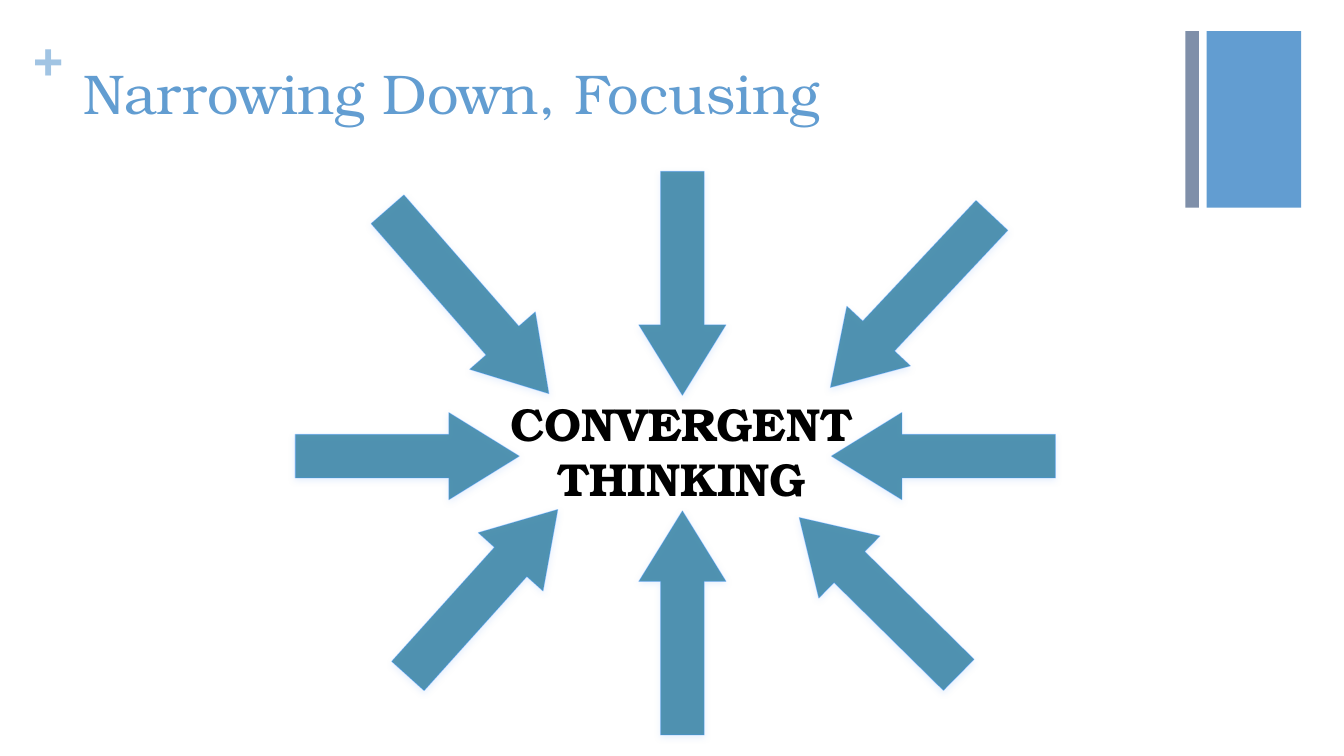
from lxml import etree
from pptx import Presentation
from pptx.dml.color import RGBColor
from pptx.enum.shapes import MSO_SHAPE
from pptx.enum.text import MSO_ANCHOR, MSO_AUTO_SIZE, PP_ALIGN
from pptx.oxml.ns import qn
from pptx.util import Pt

RECTANGLE, LEFT_ARROW = MSO_SHAPE.RECTANGLE, MSO_SHAPE.LEFT_ARROW
TOP, BOTTOM = MSO_ANCHOR.TOP, MSO_ANCHOR.BOTTOM
LEFT, CENTER = PP_ALIGN.LEFT, PP_ALIGN.CENTER
FONT = "TeX Gyre Bonum"
COLORS = {
    "blue": "629DD1", "pale": "A1C4E3", "slate": "7F8FA9", "black": "000000",
    "arrow": "2C7C9F", "outline": "3A93FF", "shadow": "ACCBF9",
}
ARROW_HEIGHT = 62.2
# Centre x, centre y, length, rotation
ARROWS = [
    (334.44, 215.28, 174.96, 228.8),
    (290.88, 325.8, 160, 180),
    (673.92, 325.8, 160, 0),
    (487.44, 202.32, 160, 270),
    (650.88, 215.28, 168.48, 313.2),
    (344.88, 423.36, 160, 132),
    (487.44, 444.96, 160, 90),
    (627.84, 425.88, 160, 44.6),
]


def color(name):
    return RGBColor.from_string(COLORS[name])


def points(*lengths):
    return [Pt(length) for length in lengths]


def write_text(shape, lines, size, color_name, bold=False, align=LEFT,
               anchor=TOP, margins=(7.2, 3.6, 7.2, 3.6)):
    frame = shape.text_frame
    left, top, right, bottom = points(*margins)
    settings = {
        "word_wrap": True, "auto_size": MSO_AUTO_SIZE.NONE,
        "vertical_anchor": anchor, "margin_left": left, "margin_top": top,
        "margin_right": right, "margin_bottom": bottom,
    }
    for name, value in settings.items():
        setattr(frame, name, value)
    frame.text = "\n".join(lines)
    for paragraph in frame.paragraphs:
        paragraph.alignment = align
        paragraph.space_before = Pt(0)
        for name, value in {"name": FONT, "size": Pt(size), "bold": bold}.items():
            setattr(paragraph.font, name, value)
        paragraph.font.color.rgb = color(color_name)


def set_opacity(fill_parent, percent):
    """Add an alpha value to the solid colour directly below the element."""
    color_element = fill_parent.find(qn("a:solidFill"))[0]
    etree.SubElement(color_element, qn("a:alpha"), val=str(percent * 1000))


def add_soft_shadow(shape):
    shape.shadow.inherit = False
    effects = shape._element.spPr.find(qn("a:effectLst"))
    shadow = etree.SubElement(
        effects, qn("a:outerShdw"), blurRad=str(Pt(5)), dist=str(Pt(1.8)),
        dir=str(90 * 60000), rotWithShape="0")
    shade = etree.SubElement(shadow, qn("a:srgbClr"), val=COLORS["shadow"])
    etree.SubElement(shade, qn("a:alpha"), val="35000")


def add_corner_bars(slide, left, top, width, height):
    slate_width = 9.6
    blue_left = 15.2
    bars = [("blue", left + blue_left, width - blue_left),
            ("slate", left, slate_width)]
    for color_name, bar_left, bar_width in bars:
        bar = slide.shapes.add_shape(
            RECTANGLE, *points(bar_left, top, bar_width, height))
        bar.shadow.inherit = False
        bar.fill.solid()
        bar.fill.fore_color.rgb = color(color_name)
        bar.line.fill.background()


def add_heading(slide, left, top, width, height):
    plus = slide.shapes.add_textbox(*points(left, top, 27.4, 44))
    write_text(plus, ["+"], 36, "pale", bold=True, margins=(0, 0, 0, 0))
    title = slide.shapes.title
    indent, drop = 28.8, 20.2
    title.left, title.top, title.width, title.height = points(
        left + indent, top + drop, width - indent, height - drop)
    write_text(title, ["Narrowing Down, Focusing"], 40, "blue")


def add_arrow(group, center_x, center_y, length, rotation):
    arrow = group.shapes.add_shape(LEFT_ARROW, *points(
        center_x - length / 2, center_y - ARROW_HEIGHT / 2, length, ARROW_HEIGHT))
    arrow.rotation = rotation
    arrow.adjustments[0] = 0.5
    arrow.adjustments[1] = 0.809
    arrow.fill.solid()
    arrow.fill.fore_color.rgb = color("arrow")
    arrow.line.color.rgb = color("outline")
    arrow.line.width = Pt(0.75)
    properties = arrow._element.spPr
    set_opacity(properties, 81)
    set_opacity(properties.find(qn("a:ln")), 34)
    add_soft_shadow(arrow)


def add_convergence(slide, left, top, width, height):
    """Place the arrows around the label box given."""
    group = slide.shapes.add_group_shape()
    center_x, center_y = left + width / 2, top + height / 2
    for arrow_x, arrow_y, length, rotation in ARROWS:
        add_arrow(group, center_x + arrow_x - 486.72,
                  center_y + arrow_y - 315.36, length, rotation)
    label = group.shapes.add_textbox(*points(left, top, width, height))
    write_text(label, ["CONVERGENT", "THINKING"], 33, "black", bold=True,
               align=CENTER, anchor=BOTTOM)


def main():
    presentation = Presentation()
    presentation.slide_width, presentation.slide_height = points(960, 540)
    slide = presentation.slides.add_slide(presentation.slide_layouts[5])
    add_corner_bars(slide, 846.8, 22.3, 82.6, 126)
    add_heading(slide, 23.8, 18, 822.2, 108)
    add_convergence(slide, 345.6, 265.7, 282.24, 99.36)
    presentation.save("out.pptx")


if __name__ == "__main__":
    main()
